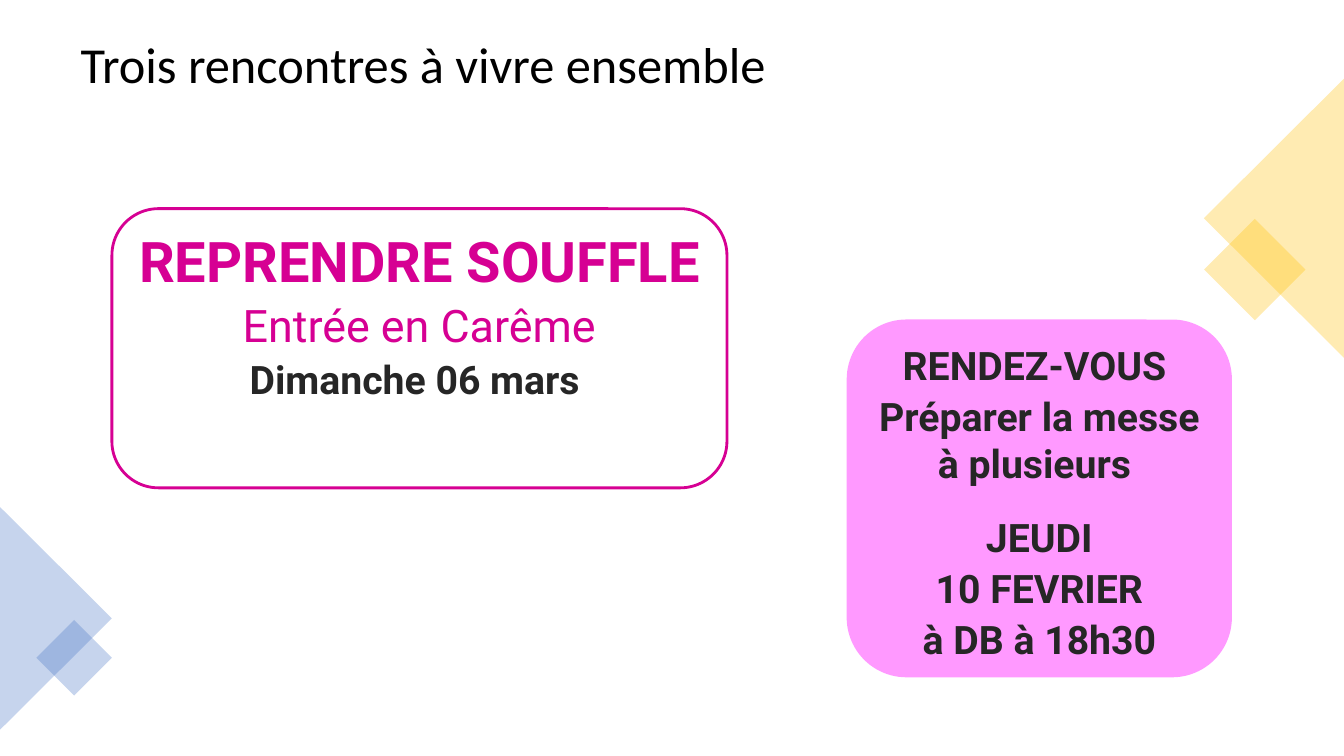
import pptx
import pptx.dml.color
import pptx.enum.shapes
import pptx.enum.text
import pptx.util
import lxml.etree

SHAPE = pptx.enum.shapes.MSO_SHAPE
ALIGN = pptx.enum.text.PP_ALIGN
ANCHOR = pptx.enum.text.MSO_ANCHOR

MAGENTA, PINK, DARK = "D60093", "FF99FF", "262626"
GOLD, BLUE, WHITE, BLACK = "FFC000", "4472C4", "FFFFFF", "000000"


def rgb(value):
    return pptx.dml.color.RGBColor.from_string(value)


class Page:
    """Holds the style and the slide; boxes are percentages of the slide's size."""

    heading_font, body_font = "Calibri", "Roboto"
    inset = pptx.util.Inches(0.04)
    gap = 3

    def __init__(self, deck):
        self.width, self.height = deck.slide_width, deck.slide_height
        self.slide = deck.slides.add_slide(deck.slide_layouts[5])

    def place(self, box):
        left, top, width, height = box
        return (int(self.width * left / 100), int(self.height * top / 100),
                int(self.width * width / 100), int(self.height * height / 100))

    def style(self, paragraph, font_name, size, color, bold, after):
        paragraph.space_after = pptx.util.Pt(after)
        for run in paragraph.runs:
            run.font.name = font_name
            run.font.size = pptx.util.Pt(size)
            run.font.bold = bold
            run.font.color.rgb = rgb(color)

    def title(self, text, box):
        heading = self.slide.shapes.title
        heading.left, heading.top, heading.width, heading.height = self.place(box)
        frame = heading.text_frame
        frame.text = text
        frame.vertical_anchor = ANCHOR.TOP
        frame.auto_size = pptx.enum.text.MSO_AUTO_SIZE.NONE
        paragraph = frame.paragraphs[0]
        paragraph.alignment = ALIGN.LEFT
        paragraph.line_spacing = 0.9
        self.style(paragraph, self.heading_font, 36, BLACK, False, self.gap)

    def shape(self, kind, box, fill, line=None):
        figure = self.slide.shapes.add_shape(kind, *self.place(box))
        figure.shadow.inherit = False
        figure.fill.solid()
        figure.fill.fore_color.rgb = rgb(fill)
        if line:
            figure.line.color.rgb = rgb(line)
            figure.line.width = pptx.util.Pt(2)
        else:
            figure.line.fill.background()
        return figure

    def ornament(self, kind, box, color, rotation):
        figure = self.shape(kind, box, color)
        figure.rotation = rotation
        tint = figure.fill._xPr.find(".//" + pptx.oxml.ns.qn("a:srgbClr"))
        lxml.etree.SubElement(tint, pptx.oxml.ns.qn("a:alpha"), val="30000")

    def card(self, box, fill, lines, line=None):
        """Each line is (text, size, colour, bold, space after)."""
        panel = self.shape(SHAPE.ROUNDED_RECTANGLE, box, fill, line)
        panel.adjustments[0] = 0.167
        frame = panel.text_frame
        frame.word_wrap = True
        frame.vertical_anchor = ANCHOR.TOP
        frame.margin_left = frame.margin_right = self.inset
        frame.margin_top = frame.margin_bottom = self.inset
        frame.text = "\n".join(text for text, *_ in lines)
        for paragraph, (_, size, color, bold, after) in zip(frame.paragraphs, lines):
            paragraph.alignment = ALIGN.CENTER
            self.style(paragraph, self.body_font, size, color, bold, after)


def main():
    deck = pptx.Presentation()
    deck.slide_width = pptx.util.Inches(13.33)
    deck.slide_height = pptx.util.Inches(7.5)
    page = Page(deck)

    # Heading
    page.title("Trois rencontres à vivre ensemble", (5.25, 4.67, 89.5, 16.53))

    # Corner ornaments
    page.ornament(SHAPE.RECTANGLE, (90.7, 30.93, 5.33, 9.47), GOLD, 45)
    page.ornament(SHAPE.ISOSCELES_TRIANGLE, (84.4, 19.6, 20.78, 18.53), GOLD, 270)
    page.ornament(SHAPE.ISOSCELES_TRIANGLE, (-4.13, 74.4, 16.58, 14.8), BLUE, 90)
    page.ornament(SHAPE.RECTANGLE, (3.53, 83.47, 3.98, 7.07), BLUE, 45)

    # Lent gathering
    page.card((8.33, 27.6, 45.76, 36.93), WHITE, [
        ("REPRENDRE SOUFFLE", 40, MAGENTA, True, page.gap),
        ("Entrée en Carême", 32, MAGENTA, False, page.gap),
        ("Dimanche 06 mars ", 28, DARK, True, page.gap),
    ], line=MAGENTA)

    # Preparation meeting, with a wider gap before the date
    meeting = [("RENDEZ-VOUS ", page.gap), ("Préparer la messe à plusieurs ", 19),
               ("JEUDI", page.gap), ("10 FEVRIER", page.gap),
               ("à DB à 18h30", page.gap)]
    page.card((63, 42.27, 28.66, 47.33), PINK,
              [(text, 28, DARK, True, after) for text, after in meeting])

    deck.save("out.pptx")


if __name__ == "__main__":
    main()
